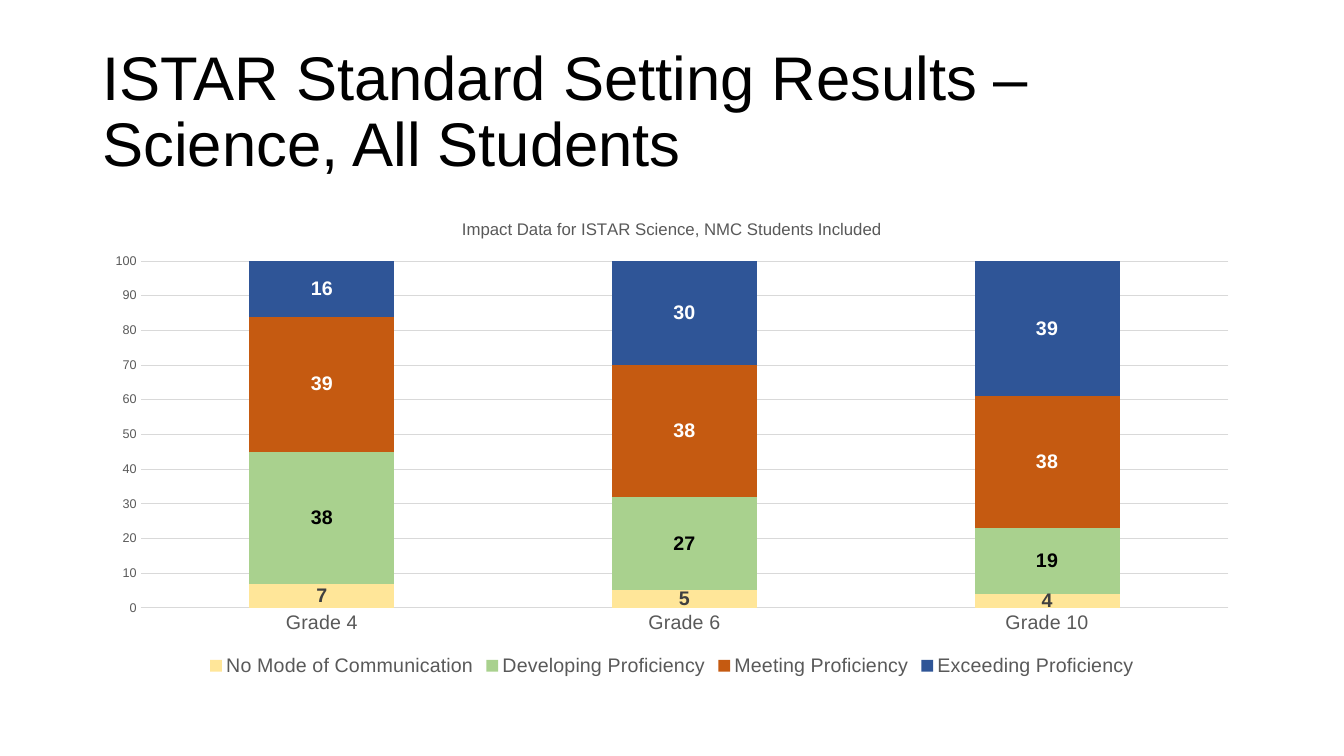
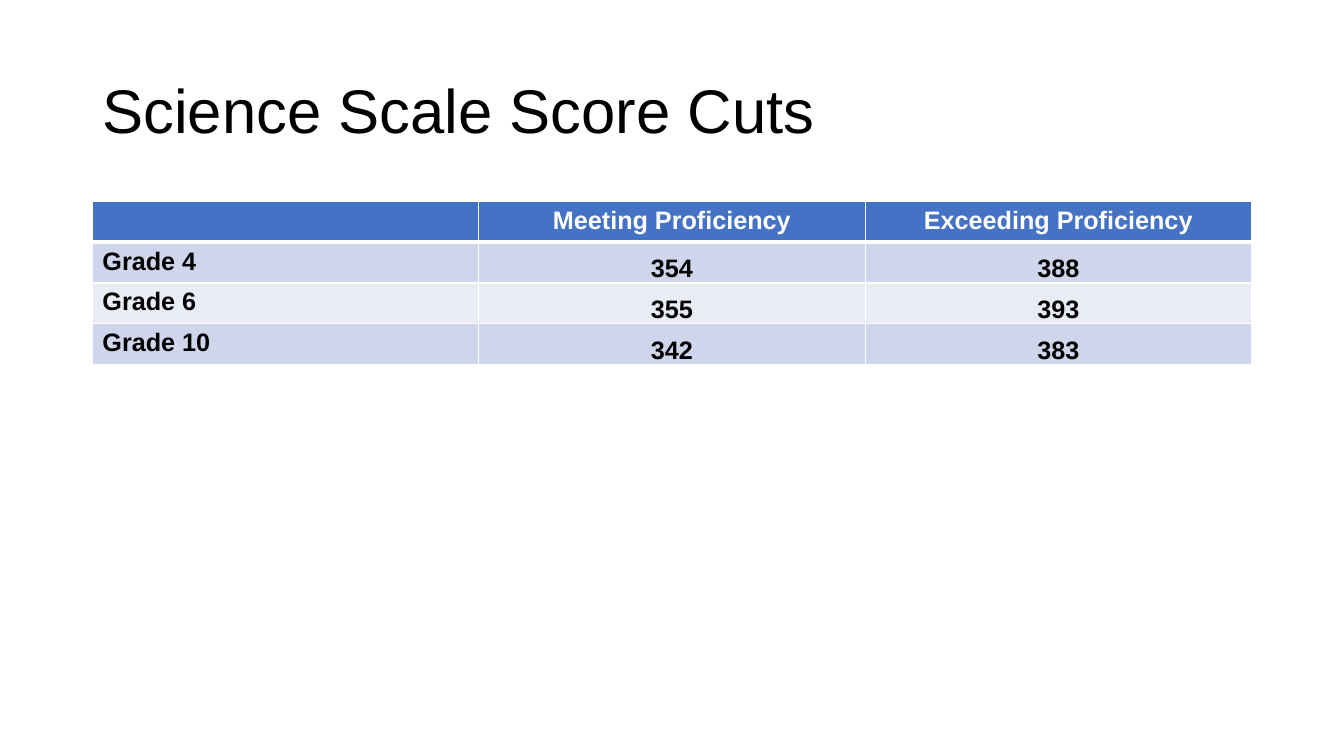
from dataclasses import dataclass

from lxml.etree import SubElement
from pptx import Presentation
from pptx.chart.data import CategoryChartData
from pptx.dml.color import RGBColor
from pptx.enum.chart import XL_CHART_TYPE as ChartType
from pptx.enum.chart import XL_LABEL_POSITION as LabelPosition
from pptx.enum.chart import XL_LEGEND_POSITION as LegendPosition
from pptx.enum.chart import XL_TICK_MARK as TickMark
from pptx.enum.text import MSO_ANCHOR as Anchor
from pptx.enum.text import MSO_AUTO_SIZE as AutoSize
from pptx.enum.text import PP_ALIGN as Align
from pptx.oxml.ns import qn
from pptx.util import Pt


@dataclass(frozen=True)
class Theme:
    """Colours, type sizes and the shared column of the slides."""

    font: str = "Arial"
    black: str = "000000"
    white: str = "FFFFFF"
    gray: str = "595959"
    dark_gray: str = "404040"
    grid: str = "D9D9D9"
    header: str = "4472C4"
    bands: tuple = ("CFD5EA", "E9EBF5")
    title_size: float = 44
    table_size: float = 18
    label_size: float = 14
    chart_title_size: float = 12
    chart_size: float = 10
    axis_size: float = 9
    left: float = 66
    width: float = 828
    title_top: float = 28.75
    title_height: float = 104.4
    content_top: float = 143.75


THEME = Theme()
GRADES = ("Grade 4", "Grade 6", "Grade 10")
IMPACT_SERIES = (
    ("No Mode of Communication", (7, 5, 4), "FFE699", THEME.dark_gray),
    ("Developing Proficiency", (38, 27, 19), "A9D18E", THEME.black),
    ("Meeting Proficiency", (39, 38, 38), "C55A11", THEME.white),
    ("Exceeding Proficiency", (16, 30, 39), "2F5597", THEME.white),
)
SCORE_CUTS = (
    ("", "Meeting Proficiency", "Exceeding Proficiency"),
    ("Grade 4", "354", "388"),
    ("Grade 6", "355", "393"),
    ("Grade 10", "342", "383"),
)


def set_values(target, values):
    """Set each named attribute of the target."""
    for name, value in values.items():
        setattr(target, name, value)


def style_font(font, size, color, bold=False):
    """Apply the theme font with a size, colour and weight."""
    set_values(font, {"name": THEME.font, "size": Pt(size), "bold": bold})
    font.color.rgb = RGBColor.from_string(color)


def style_line(line, color, width=0.75):
    """Give a line a solid colour and a width."""
    line.color.rgb = RGBColor.from_string(color)
    line.width = Pt(width)


def fill_solid(fill, color):
    """Fill with one colour."""
    fill.solid()
    fill.fore_color.rgb = RGBColor.from_string(color)


def add_titled_slide(presentation, title):
    """Add a slide with the shared title style."""
    slide = presentation.slides.add_slide(presentation.slide_layouts[5])
    shape = slide.shapes.title
    set_values(shape, {
        "left": Pt(THEME.left), "top": Pt(THEME.title_top),
        "width": Pt(THEME.width), "height": Pt(THEME.title_height),
    })
    shape.text_frame.text = title
    set_values(shape.text_frame, {
        "word_wrap": True, "auto_size": AutoSize.NONE,
        "vertical_anchor": Anchor.MIDDLE,
    })
    paragraph = shape.text_frame.paragraphs[0]
    set_values(paragraph, {"alignment": Align.LEFT, "line_spacing": 0.9})
    style_font(paragraph.runs[0].font, THEME.title_size, THEME.black)
    return slide


def style_axes(chart):
    """Format the category axis, the value axis and its gridlines."""
    category_axis, value_axis = chart.category_axis, chart.value_axis
    for axis, size in ((category_axis, THEME.label_size), (value_axis, THEME.axis_size)):
        set_values(axis, {"major_tick_mark": TickMark.NONE, "minor_tick_mark": TickMark.NONE})
        style_font(axis.tick_labels.font, size, THEME.gray)
    style_line(category_axis.format.line, THEME.grid)
    set_values(value_axis, {
        "minimum_scale": 0, "maximum_scale": 100, "major_unit": 10,
        "has_major_gridlines": True,
    })
    value_axis.format.line.fill.background()
    style_line(value_axis.major_gridlines.format.line, THEME.grid)


def style_series(series, color, label_color):
    """Colour a series and show its values in the middle of the bars."""
    fill_solid(series.format.fill, color)
    labels = series.data_labels
    set_values(labels, {"show_value": True, "position": LabelPosition.CENTER})
    style_font(labels.font, THEME.label_size, label_color, bold=True)


def add_stacked_chart(slide, title, categories, series_rows, height):
    """Add a stacked column chart with a title and a legend below."""
    data = CategoryChartData()
    data.categories = categories
    for name, values, *_ in series_rows:
        data.add_series(name, values)
    chart = slide.shapes.add_chart(
        ChartType.COLUMN_STACKED, Pt(THEME.left), Pt(THEME.content_top),
        Pt(THEME.width), Pt(height), data,
    ).chart
    style_font(chart.font, THEME.chart_size, THEME.black)
    chart.has_title = True
    title_frame = chart.chart_title.text_frame
    title_frame.text = title
    style_font(title_frame.paragraphs[0].runs[0].font, THEME.chart_title_size, THEME.gray)
    chart.has_legend = True
    set_values(chart.legend, {"position": LegendPosition.BOTTOM, "include_in_layout": False})
    style_font(chart.legend.font, THEME.label_size, THEME.gray)
    plot = chart.plots[0]
    set_values(plot, {"gap_width": 150, "overlap": 100, "vary_by_categories": False})
    style_axes(chart)
    for series, (_, _, color, label_color) in zip(plot.series, series_rows):
        style_series(series, color, label_color)


def add_borders(cell, top, bottom):
    """Draw white borders, with the top and bottom widths given."""
    properties = cell._tc.get_or_add_tcPr()
    for side, width in (("L", 1), ("R", 1), ("T", top), ("B", bottom)):
        line = SubElement(properties, qn(f"a:ln{side}"), w=str(Pt(width)))
        fill = SubElement(line, qn("a:solidFill"))
        SubElement(fill, qn("a:srgbClr"), val=THEME.white)


def style_cell(cell, text, row, column):
    """Write and format one cell by its place in the table."""
    is_header, is_score = row == 0, row > 0 and column > 0
    add_borders(cell, top=3 if row == 1 else 1, bottom=3 if is_header else 1)
    fill_solid(cell.fill, THEME.header if is_header else THEME.bands[(row - 1) % 2])
    cell.text = text
    paragraph = cell.text_frame.paragraphs[0]
    paragraph.alignment = Align.CENTER if column else Align.LEFT
    style_font(paragraph.font, THEME.table_size, THEME.white if is_header else THEME.black, bold=True)
    if is_score:
        set_values(cell, {
            "vertical_anchor": Anchor.BOTTOM, "margin_left": Pt(0.75),
            "margin_right": Pt(0.75), "margin_top": Pt(0.75), "margin_bottom": Pt(0),
        })


def add_score_table(slide, rows, row_height):
    """Add a table with equal columns and banded rows."""
    table = slide.shapes.add_table(
        len(rows), len(rows[0]), Pt(THEME.left), Pt(THEME.content_top),
        Pt(THEME.width), Pt(row_height * len(rows)),
    ).table
    for row, texts in enumerate(rows):
        for column, text in enumerate(texts):
            style_cell(table.cell(row, column), text, row, column)


def main():
    """Build and save the presentation."""
    presentation = Presentation()
    set_values(presentation, {"slide_width": Pt(960), "slide_height": Pt(540)})
    results = add_titled_slide(presentation, "ISTAR Standard Setting Results – Science, All Students")
    add_stacked_chart(
        results, "Impact Data for ISTAR Science, NMC Students Included",
        GRADES, IMPACT_SERIES, height=342.6,
    )
    cuts = add_titled_slide(presentation, "Science Scale Score Cuts")
    add_score_table(cuts, SCORE_CUTS, row_height=29.2)
    presentation.save("out.pptx")


if __name__ == "__main__":
    main()
